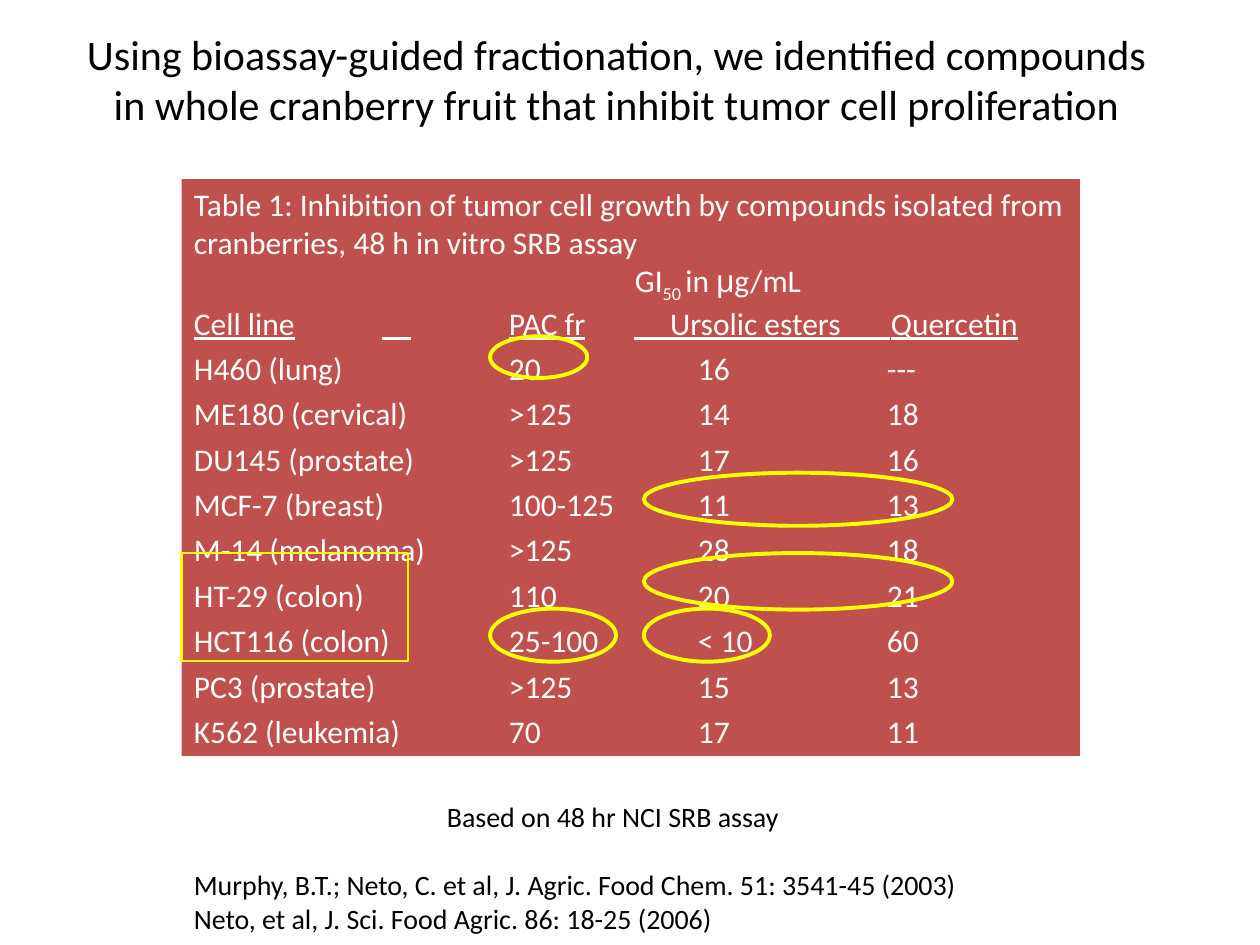
from dataclasses import dataclass

from lxml.etree import SubElement
from pptx import Presentation
from pptx.dml.color import RGBColor as Rgb
from pptx.enum.shapes import MSO_CONNECTOR as Link, MSO_SHAPE as Form
from pptx.enum.text import MSO_ANCHOR as Anchor, PP_ALIGN as Align
from pptx.oxml.ns import qn
from pptx.util import Cm, Pt


@dataclass(frozen=True)
class Theme:
    font: str = "Calibri"
    greek: str = "Arial"
    panel: Rgb = Rgb(0xC0, 0x50, 0x4D)
    mark: Rgb = Rgb(0xFF, 0xFF, 0x00)
    light: Rgb = Rgb(0xFF, 0xFF, 0xFF)
    dark: Rgb = Rgb(0x00, 0x00, 0x00)
    title: int = 24
    body: int = 18
    note: int = 16


LOOK = Theme()

# Tab stops in cm, measured from the text edge
COLS = (6.35, 10.16, 13.97)
HEADS = (6.35, 9.6, 14.05)
UNIT = (8.89,)

ROWS = (
    ("H460 (lung)", "20", "16", "---"),
    ("ME180 (cervical)", ">125", "14", "18"),
    ("DU145 (prostate)", ">125", "17", "16"),
    ("MCF-7 (breast)", "100-125", "11", "13"),
    ("M-14 (melanoma)", ">125", "28", "18"),
    ("HT-29 (colon)", "110", "20", "21"),
    ("HCT116 (colon)", "25-100", "< 10", "60"),
    ("PC3 (prostate)", ">125", "15", "13"),
    ("K562 (leukemia)", "70", "17", "11"),
)


def place(box):
    return [Cm(v) for v in box]


def add_run(para, text, size, color, font=LOOK.font):
    run = para.add_run()
    run.text = text
    run.font.name = font
    run.font.size = Pt(size)
    run.font.color.rgb = color
    return run


def set_tabs(para, stops):
    tabs = SubElement(para._p.get_or_add_pPr(), qn("a:tabLst"))
    for stop in stops:
        SubElement(tabs, qn("a:tab"), pos=str(Cm(stop)), algn="l")


def add_text(slide, box, lines, size, align=Align.LEFT, anchor=Anchor.TOP, wrap=True):
    frame = slide.shapes.add_textbox(*place(box)).text_frame
    frame.word_wrap = wrap
    frame.vertical_anchor = anchor
    for i, line in enumerate(lines):
        para = frame.add_paragraph() if i else frame.paragraphs[0]
        para.alignment = align
        add_run(para, line, size, LOOK.dark)


def add_panel(slide, box):
    panel = slide.shapes.add_shape(Form.RECTANGLE, *place(box))
    panel.shadow.inherit = False
    panel.fill.solid()
    panel.fill.fore_color.rgb = LOOK.panel
    panel.line.fill.background()
    frame = panel.text_frame
    frame.word_wrap = True
    frame.vertical_anchor = Anchor.TOP

    def write(para, text, font=LOOK.font):
        para.alignment = Align.LEFT
        return add_run(para, text, LOOK.body, LOOK.light, font)

    # Caption
    write(frame.paragraphs[0], "Table 1: Inhibition of tumor cell growth by compounds "
          "isolated from cranberries, 48 h in vitro SRB assay")

    # Unit line with its subscript
    unit = frame.add_paragraph()
    set_tabs(unit, UNIT)
    write(unit, "\tGI")
    write(unit, "50 ").font._element.set("baseline", "-25000")
    write(unit, "in ")
    write(unit, "μ", LOOK.greek)
    write(unit, "g/mL")

    # Column heads
    head = frame.add_paragraph()
    set_tabs(head, HEADS)
    names = ("Cell line", "PAC fr", "Ursolic esters", "Quercetin")
    write(head, "\t".join(names)).font.underline = True

    # Data rows
    for row in ROWS:
        para = frame.add_paragraph()
        para.line_spacing = 1.2
        set_tabs(para, COLS)
        write(para, "\t".join(row))


def add_rule(slide, left, right, y):
    rule = slide.shapes.add_connector(Link.STRAIGHT, Cm(left), Cm(y), Cm(right), Cm(y))
    rule.line.color.rgb = LOOK.light
    rule.line.width = Pt(2)
    SubElement(rule._element.spPr, qn("a:effectLst"))


def add_mark(slide, form, box, width):
    mark = slide.shapes.add_shape(form, *place(box))
    mark.shadow.inherit = False
    mark.fill.background()
    mark.line.color.rgb = LOOK.mark
    mark.line.width = Pt(width)


def main():
    deck = Presentation()
    deck.slide_width, deck.slide_height = Cm(25.4), Cm(19.05)
    slide = deck.slides.add_slide(deck.slide_layouts[6])

    # Table panel, with the rule carried on between the heads
    add_panel(slide, (3.66, 3.61, 18.11, 11.63))
    for left, right in ((7.7, 8.29), (12.78, 13.51), (16.93, 17.95)):
        add_rule(slide, left, right, 6.82)

    # Sources and note
    add_text(slide, (3.66, 17.37, 17.98, 1.63), (
        "Murphy, B.T.; Neto, C. et al, J. Agric. Food Chem. 51: 3541-45 (2003)",
        "Neto, et al, J. Sci. Food Agric. 86: 18-25 (2006)"), LOOK.note)
    add_text(slide, (8.76, 16, 7.29, 0.94), ("Based on 48 hr NCI SRB assay",),
             LOOK.note, wrap=False)

    # Rings round the active values
    pac, acid = 9.88, 12.98
    for ring in ((pac, 6.78, 1.96, 0.84), (acid, 9.53, 6.22, 1.07),
                 (acid, 12.27, 2.54, 1.07), (acid, 11.15, 6.22, 1.14),
                 (pac, 12.27, 2.54, 1.07)):
        add_mark(slide, Form.OVAL, ring, 2.25)

    # Title
    add_text(slide, (1.14, 0, 22.58, 3.18), (
        "Using bioassay-guided fractionation, we identified compounds in whole "
        "cranberry fruit that inhibit tumor cell proliferation",),
        LOOK.title, Align.CENTER, Anchor.MIDDLE)

    # Frame round the colon lines
    add_mark(slide, Form.RECTANGLE, (3.66, 11.15, 4.57, 2.18), 1.5)

    deck.save("out.pptx")


if __name__ == "__main__":
    main()
